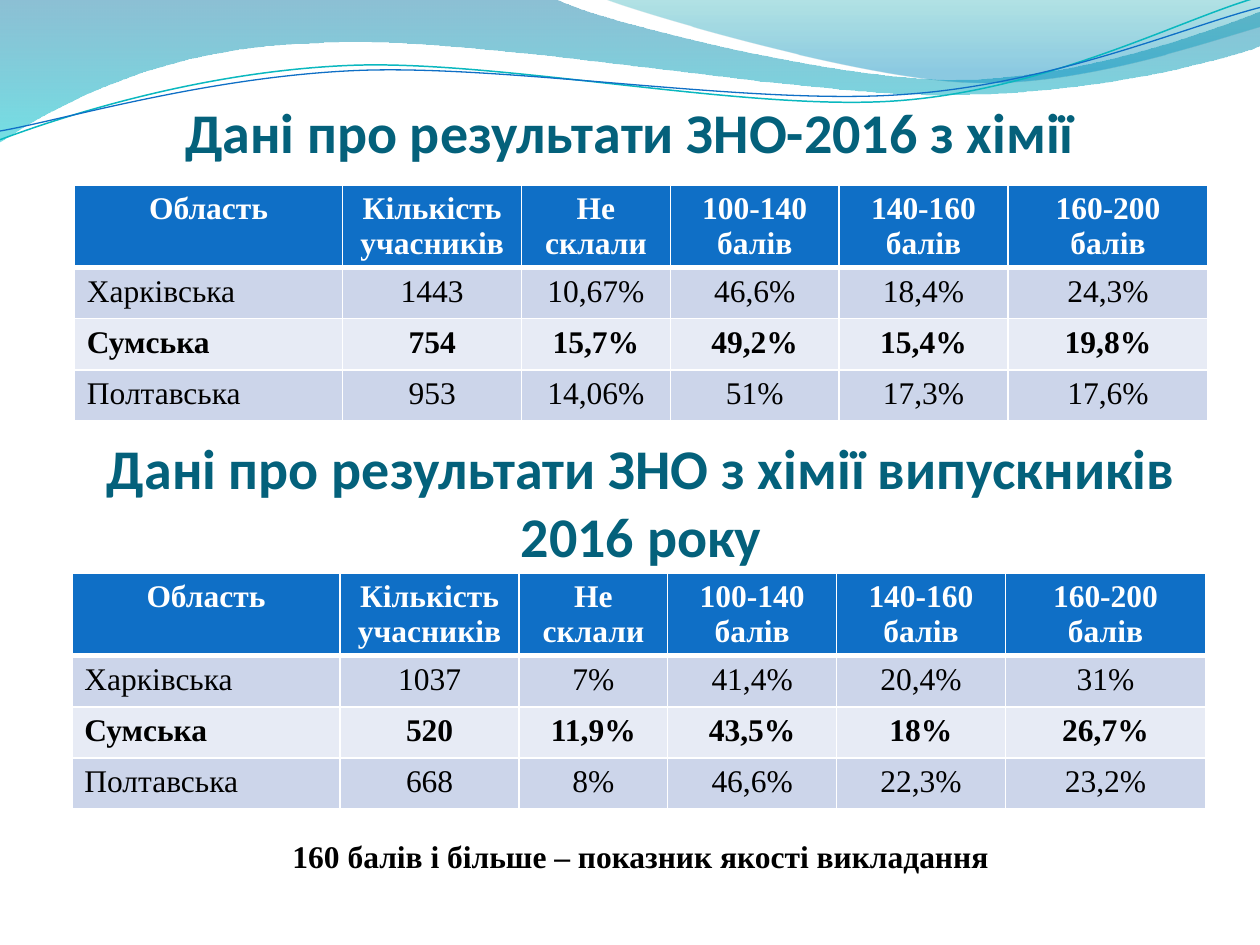
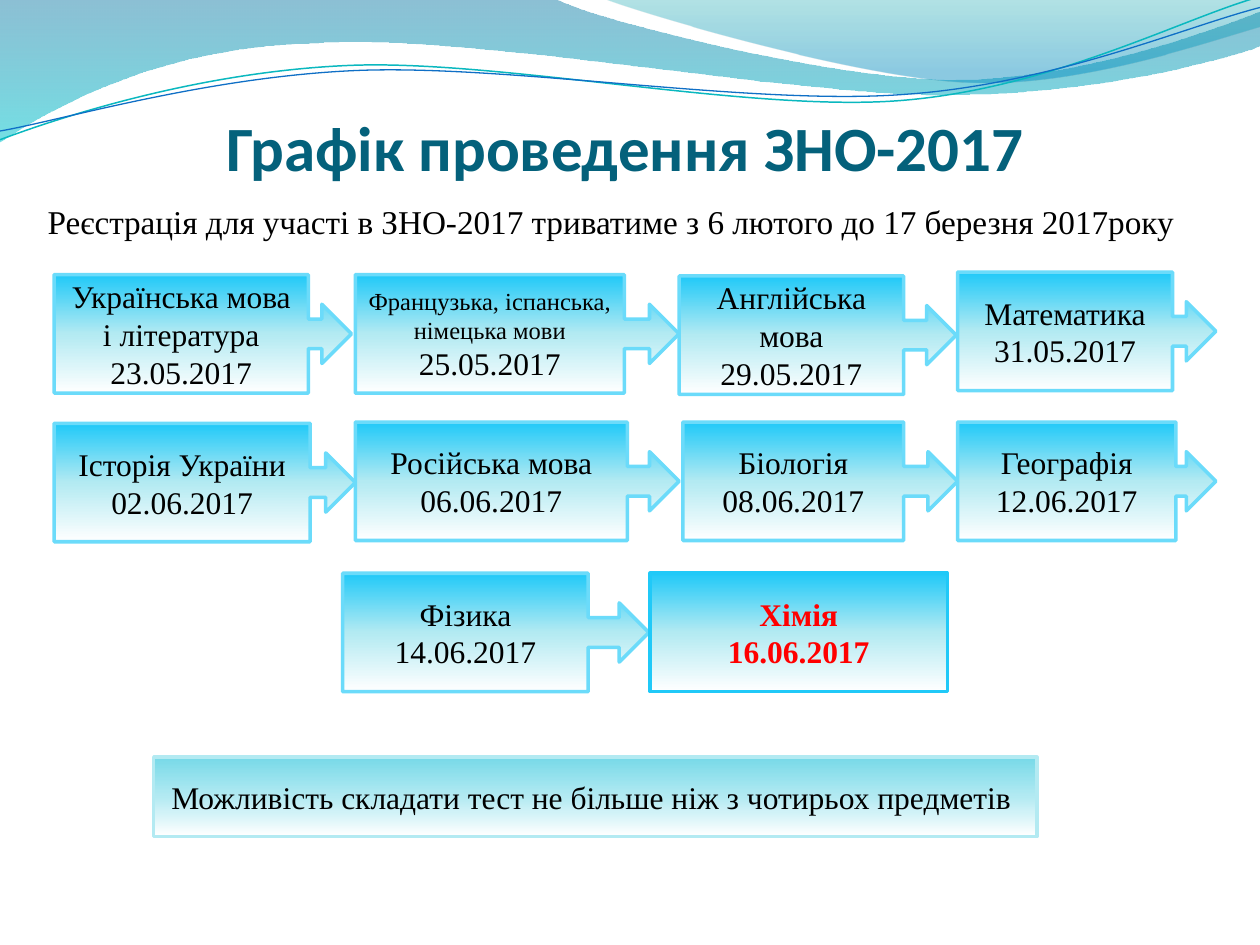
from math import cos, radians, sin

from lxml import etree
from pptx import Presentation
from pptx.dml.color import RGBColor
from pptx.enum.shapes import MSO_SHAPE
from pptx.enum.text import MSO_ANCHOR, MSO_AUTO_SIZE, PP_ALIGN
from pptx.oxml.ns import qn
from pptx.util import Inches, Pt

LEFT, CENTER = PP_ALIGN.LEFT, PP_ALIGN.CENTER
MIDDLE, BOTTOM = MSO_ANCHOR.MIDDLE, MSO_ANCHOR.BOTTOM
NO_FIT = MSO_AUTO_SIZE.NONE
RECT, CALLOUT = MSO_SHAPE.RECTANGLE, MSO_SHAPE.RIGHT_ARROW_CALLOUT

HEADING = RGBColor(0x04, 0x61, 0x7B)
BLUE = RGBColor(0x0F, 0x6F, 0xC6)
TEAL = RGBColor(0x0A, 0xB8, 0xBF)
BLACK = RGBColor(0, 0, 0)
WHITE = RGBColor(255, 255, 255)
RED = RGBColor(255, 0, 0)
ROW_DARK = RGBColor(0xCC, 0xD5, 0xEA)
ROW_LIGHT = RGBColor(0xE7, 0xEB, 0xF5)
SKY = RGBColor(0x20, 0xC9, 0xF8)
SKY_EDGE = RGBColor(0x6B, 0xDB, 0xFA)
AQUA = RGBColor(0x77, 0xD9, 0xE8)
PALE = RGBColor(0xB3, 0xEA, 0xF2)
WAVE_TOP = RGBColor(0x00, 0x74, 0xA1)
WAVE_BOTTOM = RGBColor(0x00, 0xC6, 0xCF)
CREST_TOP = RGBColor(0x00, 0xA1, 0xA9)
CREST_BOTTOM = RGBColor(0x00, 0x8B, 0xBF)
HEAD_FONT, BODY_FONT = "Calibri", "Times New Roman"


def write(p, text, size=18, color=BLACK, bold=False, font=BODY_FONT, align=CENTER):
    p.alignment = align
    r = p.add_run()
    r.text = text
    r.font.name, r.font.size, r.font.bold = font, Pt(size), bold
    r.font.color.rgb = color


def fade(sp, stops):
    """Fill from top to bottom; each stop is (position %, colour, opacity %)."""
    sp.fill.gradient()
    sp.fill.gradient_angle = 270
    stop_list = sp.element.spPr.find(qn("a:gradFill")).find(qn("a:gsLst"))
    for old in list(stop_list):
        stop_list.remove(old)
    for position, color, opacity in stops:
        gs = etree.SubElement(stop_list, qn("a:gs"), pos=str(position * 1000))
        clr = etree.SubElement(gs, qn("a:srgbClr"), val=str(color))
        if opacity < 100:
            etree.SubElement(clr, qn("a:alpha"), val=str(opacity * 1000))


prs = Presentation()
prs.slide_width, prs.slide_height = Inches(10), Inches(7.5)
title_only = prs.slide_layouts[5]
s1 = prs.slides.add_slide(title_only)
s2 = prs.slides.add_slide(title_only)

# Waves: a pair of numbers is a straight step, six numbers are a Bezier curve
waves = [
    ([(0, 0), (4.4, -0.01), (4.76, 0.17, 6.64, 0.63, 7.58, 0.63),
      (8.53, 0.63, 9.58, 0.26, 10, 0.09), (10.01, 0.36),
      (9.83, 0.44, 8.7, 0.76, 7.46, 0.75), (6.22, 0.75, 3.82, 0.28, 2.57, 0.34),
      (1.29, 0.36, 0.46, 0.83, -0.01, 1.13), (0, 0)],
     [(0, WAVE_TOP, 45), (100, WAVE_BOTTOM, 55)], None, 0, 0, 0),
    ([(4.79, -0.01), (5.09, 0.11, 6.82, 0.62, 7.69, 0.65),
      (8.56, 0.69, 9.61, 0.32, 10, 0.21), (10, 0), (4.79, -0.01)],
     [(0, CREST_TOP, 30), (80, CREST_BOTTOM, 45)], None, 0, 0, 0),
    ([(0, 1.11), (0.48, 0.93, 1.58, 0.57, 2.77, 0.52),
      (3.95, 0.47, 5.93, 0.89, 7.13, 0.8), (8.33, 0.71, 9.38, 0.15, 9.98, -0.02)],
     None, TEAL, 0.85, 2.7, 0.57),
    ([(0, 1.04), (0.47, 0.96, 1.64, 0.61, 2.83, 0.56),
      (4.03, 0.51, 5.97, 0.84, 7.17, 0.75), (8.36, 0.67, 9.41, 0.21, 10, 0.06)],
     None, BLUE, 0.75, 2.7, 0.59),
]
master_tree = prs.slide_master.shapes.element
for z, (segments, stops, line_color, line_width, tilt, mid) in enumerate(waves):
    # Level the tilted lines about their centre; the shape's rotation tilts them back
    ca, sa = cos(radians(tilt)), sin(radians(tilt))
    points = []
    for seg in segments:
        for x, y in zip(seg[::2], seg[1::2]):
            dx, dy = x - 5, y - mid
            points.append((Inches(5 + dx * ca - dy * sa), Inches(mid + dx * sa + dy * ca)))
    builder = s1.shapes.build_freeform(*points[0])
    builder.add_line_segments(points[1:], close=stops is not None)
    sp = builder.convert_to_shape()
    sp.rotation = -tilt
    # Join each three steps of a curve into one Bezier segment
    steps = list(sp.element.spPr.iter(qn("a:lnTo")))
    for seg in segments[1:]:
        if len(seg) == 6:
            curve = etree.Element(qn("a:cubicBezTo"))
            steps[0].addprevious(curve)
            for step in steps[:3]:
                curve.append(step[0])
                step.getparent().remove(step)
        steps = steps[len(seg) // 2:]
    sp.shadow.inherit = False
    if stops:
        fade(sp, stops)
        sp.line.fill.background()
    else:
        sp.fill.background()
        sp.line.color.rgb, sp.line.width = line_color, Pt(line_width)
    master_tree.insert(2 + z, sp.element)  # both slides inherit the waves

# Slide 1: result tables
header = ["Область", "Кількість учасників", "Не склали",
          "100-140 балів", "140-160 балів", "160-200 балів"]
col_widths = [2.13, 1.42, 1.18, 1.34, 1.34, 1.59]
row_fills = [BLUE, ROW_DARK, ROW_LIGHT, ROW_DARK]
tables = [
    (0.59, 1.47, [
        ["Харківська", "1443", "10,67%", "46,6%", "18,4%", "24,3%"],
        ["Сумська", "754", "15,7%", "49,2%", "15,4%", "19,8%"],
        ["Полтавська", "953", "14,06%", "51%", "17,3%", "17,6%"]]),
    (0.57, 4.55, [
        ["Харківська", "1037", "7%", "41,4%", "20,4%", "31%"],
        ["Сумська", "520", "11,9%", "43,5%", "18%", "26,7%"],
        ["Полтавська", "668", "8%", "46,6%", "22,3%", "23,2%"]]),
]
for left, top, regions in tables:
    frame = s1.shapes.add_table(4, 6, Inches(left), Inches(top), Inches(9), Inches(1.92))
    table = frame.table
    for column, width in zip(table.columns, col_widths):
        column.width = Inches(width)
    for i, values in enumerate([header] + regions):
        table.rows[i].height = Pt(29.2)  # the header grows to two lines
        for j, value in enumerate(values):
            cell = table.cell(i, j)
            cell.fill.solid()
            cell.fill.fore_color.rgb = row_fills[i]
            write(cell.text_frame.paragraphs[0], value,
                  color=BLACK if i else WHITE, bold=i in (0, 2),
                  align=LEFT if i and j == 0 else CENTER)
            # White borders, thick under the header
            tc_pr = cell._tc.get_or_add_tcPr()
            for n, side in enumerate(("lnL", "lnR", "lnT", "lnB")):
                thick = (i, side) in ((0, "lnB"), (1, "lnT"))
                ln = etree.Element(qn("a:" + side), w=str(Pt(3 if thick else 1)))
                fill = etree.SubElement(ln, qn("a:solidFill"))
                etree.SubElement(fill, qn("a:srgbClr"), val=str(WHITE))
                tc_pr.insert(n, ln)
    frame.height = Inches(1.92)

# Headings
subheading = s1.shapes.add_textbox(0, 0, 0, 0)
headings = [
    (s1.shapes.title, (0.5, 0.77, 9, 0.54), 32, "Дані про результати ЗНО-2016 з хімії"),
    (subheading, (0.59, 3.6, 9, 0.91), 32,
     "Дані про результати ЗНО з хімії випускників 2016 року"),
    (s2.shapes.title, (1.06, 0.76, 7.81, 0.7), 36, "Графік проведення ЗНО-2017"),
]
for sp, box, size, text in headings:
    sp.left, sp.top, sp.width, sp.height = map(Inches, box)
    tf = sp.text_frame
    tf.word_wrap, tf.auto_size, tf.vertical_anchor = True, NO_FIT, BOTTOM
    tf.margin_left = tf.margin_right = tf.margin_bottom = 0
    tf.margin_top = Inches(0.05)
    write(tf.paragraphs[0], text, size, HEADING, True, HEAD_FONT)

# Plain text lines
notes = [
    (s1, (1.32, 6.59, 7.53, 0.4), "160 балів і більше – показник якості викладання",
     18, True, CENTER, 0),
    (s2, (0.28, 1.55, 9.53, 0.55),
     "Реєстрація для участі в ЗНО-2017 триватиме з 6 лютого до 17 березня 2017року",
     19, False, LEFT, 4),
]
for s, box, text, size, bold, align, space in notes:
    tf = s.shapes.add_textbox(*map(Inches, box)).text_frame
    tf.word_wrap = True
    p = tf.paragraphs[0]
    p.space_before = Pt(space)
    write(p, text, size, bold=bold, align=align)

# Slide 2: exam schedule; the last number is the share of the box in a callout
H = 0.94
exams = [
    (0.43, 2.18, 2.36, "Українська мова і література", "23.05.2017", 0.855),
    (5.39, 2.19, 2.2, "Англійська мова", "29.05.2017", 0.81),
    (2.82, 2.18, 2.57, "Французька, іспанська, німецька мови", "25.05.2017", 0.831),
    (0.43, 3.36, 2.39, "Історія України", "02.06.2017", 0.85),
    (2.82, 3.35, 2.57, "Російська мова", "06.06.2017", 0.84),
    (7.6, 2.16, 2.05, "Математика", "31.05.2017", 0.832),
    (7.6, 3.35, 2.05, "Географія", "12.06.2017", 0.845),
    (5.42, 3.35, 2.18, "Біологія", "08.06.2017", 0.804),
    (2.72, 4.55, 2.43, "Фізика", "14.06.2017", 0.802),
    (5.16, 4.55, 2.36, "Хімія", "16.06.2017", None),
]
boxes = [((x, y, w, H), [subject, date], share, SKY, SKY_EDGE if share else SKY)
         for x, y, w, subject, date, share in exams]
boxes.append(((1.22, 6.01, 7.01, 0.63),
              ["Можливість складати тест не більше ніж з чотирьох предметів "],
              None, AQUA, PALE))
for box, lines, share, top_color, edge in boxes:
    sp = s2.shapes.add_shape(CALLOUT if share else RECT, *map(Inches, box))
    sp.shadow.inherit = False
    if share:
        for n, value in enumerate((0.25, 0.25, 0.25, share)):
            sp.adjustments[n] = value
    fade(sp, [(0, top_color, 100), (50, PALE, 100), (100, WHITE, 100)])
    sp.line.color.rgb, sp.line.width = edge, Pt(2)
    tf = sp.text_frame
    tf.word_wrap, tf.vertical_anchor = True, MIDDLE
    chemistry = lines[0] == "Хімія"
    for n, text in enumerate(lines):
        p = tf.add_paragraph() if n else tf.paragraphs[0]
        write(p, text, 14 if len(lines) == 2 and len(text) > 30 else 18,
              RED if chemistry else BLACK, chemistry)

prs.save("out.pptx")
